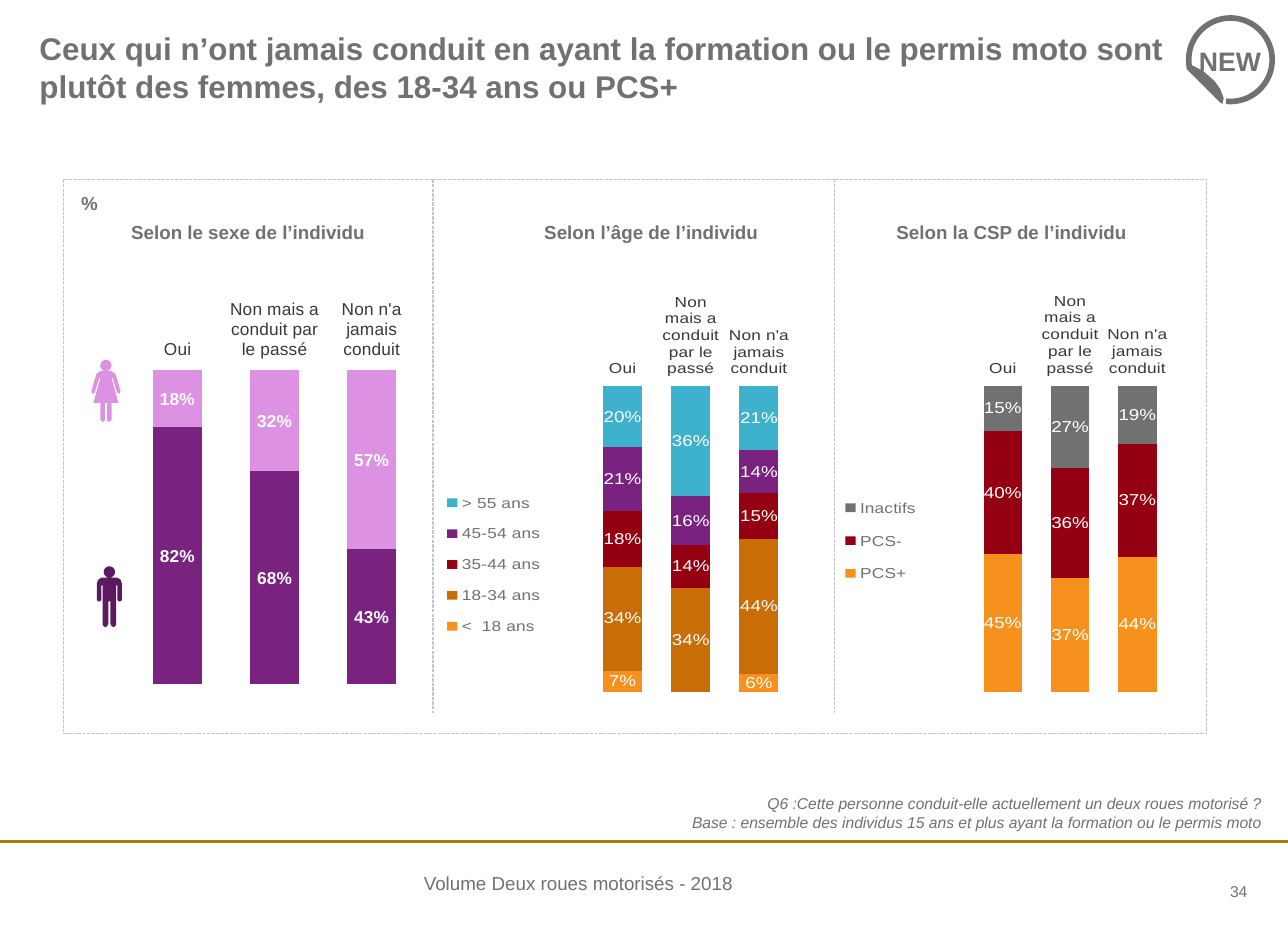
from math import cos, radians, sin

from lxml.etree import SubElement
from pptx import Presentation
from pptx.chart.data import CategoryChartData
from pptx.dml.color import RGBColor
from pptx.enum.chart import XL_CHART_TYPE as ChartType
from pptx.enum.chart import XL_LABEL_POSITION as LabelPosition
from pptx.enum.chart import XL_LEGEND_POSITION as LegendPosition
from pptx.enum.chart import XL_TICK_LABEL_POSITION as TickPosition
from pptx.enum.dml import MSO_LINE
from pptx.enum.shapes import MSO_CONNECTOR, MSO_SHAPE
from pptx.enum.text import MSO_ANCHOR, PP_ALIGN
from pptx.oxml import parse_xml
from pptx.oxml.ns import nsdecls, qn
from pptx.util import Inches, Pt

COLORS = {
    "grey": "717171", "dark": "383838", "white": "FFFFFF", "dash": "C6C6C6", "gold": "A67C0A",
    "orange": "F7911E", "brown": "C96E07", "red": "940011", "purple": "7A2280", "blue": "3EB1CC",
    "pink": "DD91E2", "plum": "5B1A60",
}
ANSWERS = ["Oui", "Non mais a conduit par le passé", "Non n'a jamais conduit"]
SEX = [("Series 1", [0.82, 0.68, 0.43], "purple"), ("Series 2", [0.18, 0.32, 0.57], "pink")]
AGE = [
    ("<  18 ans", [0.07, 0, 0.06], "orange"),
    ("18-34 ans", [0.34, 0.34, 0.44], "brown"),
    ("35-44 ans", [0.18, 0.14, 0.15], "red"),
    ("45-54 ans", [0.21, 0.16, 0.14], "purple"),
    ("> 55 ans", [0.2, 0.36, 0.21], "blue"),
]
CSP = [
    ("PCS+", [0.45, 0.37, 0.44], "orange"),
    ("PCS-", [0.4, 0.36, 0.37], "red"),
    ("Inactifs", [0.15, 0.27, 0.19], "grey"),
]
MAN_HALF = [
    (0, 5.12), (0.07, 5.12), (0.1, 5.14), (0.11, 5.17), (0.11, 5.32), (0.1, 5.33), (0.08, 5.33),
    (0.07, 5.31), (0.07, 5.19), (0.06, 5.19), (0.06, 5.54), (0.04, 5.56), (0.02, 5.55),
    (0.01, 5.53), (0.01, 5.33), (0, 5.33),
]
WOMAN_HALF = [
    (0, 3.29), (0.05, 3.29), (0.08, 3.31), (0.09, 3.33), (0.13, 3.47), (0.12, 3.49), (0.1, 3.48),
    (0.06, 3.35), (0.05, 3.35), (0.11, 3.57), (0.05, 3.57), (0.05, 3.72), (0.03, 3.74),
    (0.01, 3.73), (0.01, 3.57), (0, 3.57),
]
PEEL = [
    (10.52, 0.61), (10.57, 0.58), (10.63, 0.61), (10.68, 0.64), (10.77, 0.72), (10.82, 0.79),
    (10.85, 0.87), (10.84, 0.92), (10.82, 0.91),
]


def color(name):
    return RGBColor.from_string(COLORS[name])


def style_font(font, size, name="grey", bold=False, italic=False):
    font.name, font.size, font.bold, font.italic = "Arial", Pt(size), bold, italic
    font.color.rgb = color(name)


def add_text(page, lines, area, size, align=PP_ALIGN.LEFT, insets=(0, 0, 0, 0),
             anchor=MSO_ANCHOR.TOP, wrap=True, bold=False, italic=False):
    frame = page.shapes.add_textbox(*map(Inches, area)).text_frame
    frame.word_wrap = wrap
    frame.vertical_anchor = anchor
    (frame.margin_left, frame.margin_top,
     frame.margin_right, frame.margin_bottom) = map(Inches, insets)
    frame.text = "\n".join(lines)
    for para in frame.paragraphs:
        para.alignment = align
        style_font(para.font, size, bold=bold, italic=italic)


def add_line(page, start, end, name, width, dash=None):
    line = page.shapes.add_connector(MSO_CONNECTOR.STRAIGHT, *map(Inches, start + end))
    line.line.color.rgb = color(name)
    line.line.width = Pt(width)
    if dash:
        line.line.dash_style = dash
    SubElement(line._element.spPr, qn("a:effectLst"))


def add_outline(page, contours, closed=True):
    contours = [[(Inches(x), Inches(y)) for x, y in contour] for contour in contours]
    builder = page.shapes.build_freeform(*contours[0][0])
    for index, contour in enumerate(contours):
        if index:
            builder.move_to(*contour[0])
        builder.add_line_segments(contour[1:], close=closed)
    shape = builder.convert_to_shape()
    shape.shadow.inherit = False
    return shape


def fill_outline(page, contours, name):
    shape = add_outline(page, contours)
    shape.fill.solid()
    shape.fill.fore_color.rgb = color(name)
    shape.line.fill.background()


def arc(center, radius, start, end, step):
    return [(center[0] + radius * cos(radians(angle)), center[1] + radius * sin(radians(angle)))
            for angle in range(start, end, step)]


def add_person(page, half, center, name):
    right = [(center + x, y) for x, y in half]
    left = [(center - x, y) for x, y in reversed(half)]
    head = arc((center, half[0][1] - 0.05), 0.05, 0, 360, 15)
    fill_outline(page, [right + left, head], name)


def add_badge(page):
    ring = add_outline(page, [arc((10.91, 0.53), 0.37, 168, 460, 4)], closed=False)
    ring.fill.background()
    ring.line.color.rgb = color("grey")
    ring.line.width = Pt(3.6)
    fill_outline(page, [PEEL], "grey")
    add_text(page, ["NEW"], (10.51, 0.34, 0.79, 0.4), 17, PP_ALIGN.CENTER,
             anchor=MSO_ANCHOR.MIDDLE, wrap=False, bold=True)


def manual_layout(box, inner=False):
    target = '<c:layoutTarget val="inner"/>' if inner else ""
    modes = '<c:xMode val="edge"/><c:yMode val="edge"/>'
    sizes = "".join(f'<c:{key} val="{value}"/>' for key, value in zip("xywh", box))
    return parse_xml(f'<c:layout {nsdecls("c")}><c:manualLayout>{target}{modes}{sizes}'
                     "</c:manualLayout></c:layout>")


def remove_layout(element):
    for layout in element.findall(qn("c:layout")):
        element.remove(layout)


def add_stack(page, area, series, gap, size, plot_box, legend_box=None, bold=False):
    data = CategoryChartData(number_format="0%")
    data.categories = ANSWERS
    for name, values, _ in series:
        data.add_series(name, values)
    chart = page.shapes.add_chart(
        ChartType.COLUMN_STACKED_100, *map(Inches, area), data).chart
    chart.has_title = False
    style_font(chart.font, 11)
    plot = chart.plots[0]
    plot.gap_width, plot.overlap, plot.vary_by_categories = gap, 100, False
    for drawn, (_, _, name) in zip(plot.series, series):
        drawn.format.fill.solid()
        drawn.format.fill.fore_color.rgb = color(name)
        labels = drawn.data_labels
        labels.show_value = True
        labels.number_format, labels.number_format_is_linked = "0%;;", False
        labels.position = LabelPosition.CENTER
        style_font(labels.font, size, "white", bold)
    answers, shares = chart.category_axis, chart.value_axis
    answers.tick_label_position = TickPosition.HIGH
    answers.format.line.fill.background()
    answers.tick_labels.font.size = Pt(11)
    style_font(answers.tick_labels.font, 11, "dark")
    answers._element.find(qn("c:txPr")).find(qn("a:bodyPr")).set("rot", "0")
    shares.minimum_scale, shares.maximum_scale = 0, 1
    shares.has_major_gridlines = shares.visible = False
    plot_area = chart._chartSpace.chart.plotArea
    remove_layout(plot_area)
    plot_area.insert(0, manual_layout(plot_box, inner=True))
    chart.has_legend = legend_box is not None
    if legend_box:
        legend = chart.legend
        legend.position = LegendPosition.RIGHT
        legend.include_in_layout = False
        style_font(legend.font, 11)
        remove_layout(legend._element)
        legend._element.find(qn("c:overlay")).addprevious(manual_layout(legend_box))


def add_frame(page):
    frame = page.shapes.add_shape(MSO_SHAPE.RECTANGLE, *map(Inches, (0.56, 1.59, 10.14, 4.91)))
    frame.shadow.inherit = False
    frame.fill.background()
    frame.line.color.rgb = color("dash")
    frame.line.width = Pt(0.75)
    frame.line.dash_style = MSO_LINE.SQUARE_DOT
    for x in (3.84, 7.4):
        add_line(page, (x, 1.59), (x, 6.32), "dash", 0.75, MSO_LINE.SQUARE_DOT)


def main():
    """Build the slide on riders by sex, age and occupation."""
    deck = Presentation()
    deck.slide_width, deck.slide_height = Inches(11.42), Inches(8.27)
    page = deck.slides.add_slide(deck.slide_layouts[6])
    add_line(page, (0, 7.46), (11.42, 7.46), "gold", 1.5)
    add_text(page, ["Volume Deux roues motorisés - 2018"], (3.66, 7.68, 2.96, 0.3), 12,
             insets=(0.1, 0.05, 0.1, 0.05), wrap=False)
    add_text(page, ["Ceux qui n’ont jamais conduit en ayant la formation ou le permis moto sont "
                    "plutôt des femmes, des 18-34 ans ou PCS+"],
             (0.35, 0, 10.71, 0.93), 20, insets=(0, 0.26, 0, 0), bold=True)
    add_text(page, ["34"], (10.26, 7.8, 0.8, 0.2), 10, PP_ALIGN.RIGHT, anchor=MSO_ANCHOR.MIDDLE)
    add_stack(page, (3.84, 2.6, 3.36, 4.16), AGE, 75, 12,
              (0.41, 0.04, 0.54, 0.78), (0.01, 0.28, 0.3, 0.43))
    add_stack(page, (1.09, 2.57, 2.69, 3.57), SEX, 100, 11, (0.02, 0.2, 0.96, 0.78), bold=True)
    add_stack(page, (7.4, 2.59, 3.14, 4.3), CSP, 75, 12,
              (0.38, 0.04, 0.57, 0.75), (0, 0.28, 0.26, 0.28))
    add_person(page, MAN_HALF, 0.97, "plum")
    add_person(page, WOMAN_HALF, 0.94, "pink")
    add_frame(page)
    add_text(page, ["%"], (0.72, 1.7, 0.16, 0.19), 12, wrap=False, bold=True)
    for heading, left, width in (("Selon le sexe de l’individu", 0.56, 3.28),
                                 ("Selon l’âge de l’individu", 3.14, 5.27),
                                 ("Selon la CSP de l’individu", 7.4, 3.14)):
        add_text(page, [heading], (left, 1.96, width, 0.2), 12, PP_ALIGN.CENTER, bold=True)
    add_text(page, ["Q6 :Cette personne conduit-elle actuellement un deux roues motorisé ?",
                    "Base : ensemble des individus 15 ans et plus ayant la formation ou le permis moto"],
             (5.56, 7, 5.71, 0.44), 10, PP_ALIGN.RIGHT, (0.09, 0.04, 0.09, 0.04), italic=True)
    add_badge(page)
    deck.save("out.pptx")


if __name__ == "__main__":
    main()
